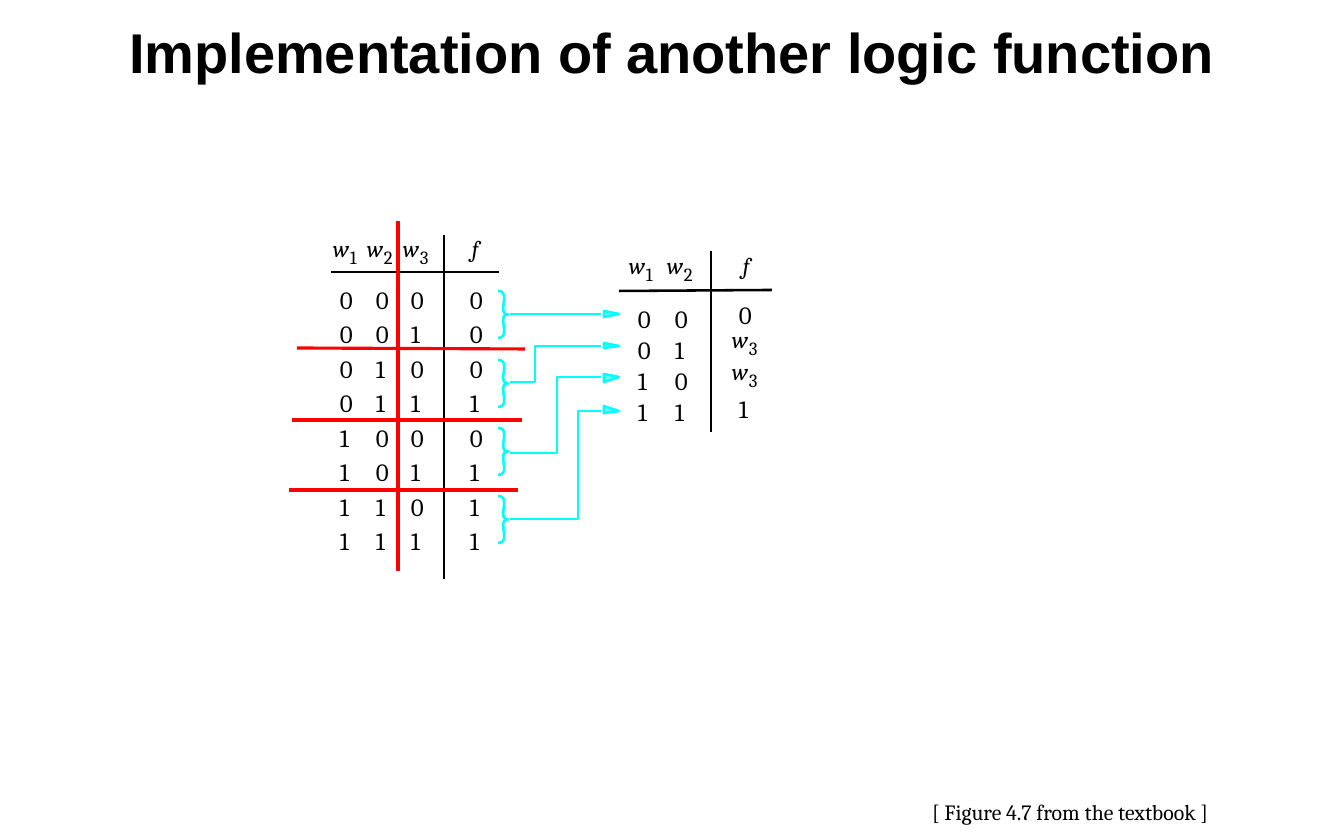
from typing import NamedTuple

from lxml.etree import SubElement
from pptx import Presentation
from pptx.dml.color import RGBColor
from pptx.enum.shapes import MSO_CONNECTOR
from pptx.enum.text import MSO_ANCHOR, MSO_AUTO_SIZE, PP_ALIGN
from pptx.oxml.ns import qn
from pptx.util import Emu, Pt

SCALE = 914400 / 112
BLACK = RGBColor(0x00, 0x00, 0x00)
RED = RGBColor(0xFF, 0x00, 0x00)
CYAN = RGBColor(0x00, 0xFF, 0xFF)
PALE = RGBColor(0x66, 0xFF, 0xFF)
THIN, THICK = 1.63, 2

Point = tuple[float, float]


class Rule(NamedTuple):
    x1: int
    y1: int
    x2: int
    y2: int
    color: RGBColor
    width: float


class Link(NamedTuple):
    """Brace around two rows, and the arrow to the row they reduce to."""
    top: int     # of the brace
    mid: int     # where the arrow leaves
    turn: int    # x of the bend
    tip: int     # where the arrow ends
    above: int   # reach of the arrowhead over the tip
    below: int


class Mark(NamedTuple):
    text: str
    x: int
    y: int


RULES = [
    Rule(499, 272, 331, 272, BLACK, THIN),
    Rule(444, 579, 444, 235, BLACK, THIN),
    Rule(772, 290, 619, 291, BLACK, THIN),
    Rule(711, 432, 711, 251, BLACK, THIN),
    Rule(398, 221, 398, 571, RED, THICK),
    Rule(297, 348, 525, 349, RED, THICK),
    Rule(292, 420, 522, 420, RED, THICK),
    Rule(289, 490, 518, 490, RED, THICK),
]
LINKS = [
    Link(291, 314, 535, 314, 3, 3),
    Link(360, 382, 535, 346, 3, 2),
    Link(428, 453, 557, 377, 3, 5),
    Link(496, 519, 578, 411, 5, 2),
]
NAMES = [
    Mark("w1", 333, 234), Mark("w2", 367, 234), Mark("w3", 403, 234),
    Mark("f", 472, 234),
    Mark("w1", 629, 251), Mark("w2", 667, 251), Mark("f", 743, 251),
    Mark("w3", 732, 325), Mark("w3", 732, 357),
]
FULL = ["0000", "0010", "0100", "0111", "1000", "1011", "1101", "1111"]
SHORT = ["00", "01", "10", "11"]


def px(n: float) -> Emu:
    return Emu(round(n * SCALE))


def style(frame, size: int, font: str, bold=False, italic=False) -> None:
    for run in frame.paragraphs[0].runs:
        run.font.size = Pt(size)
        run.font.name = font
        run.font.bold = bold
        run.font.italic = italic
        run.font.color.rgb = BLACK


def add_text(slide, text: str, x: int, y: int, w: int, h: int, size: int,
             italic=False, inset=False) -> None:
    frame = slide.shapes.add_textbox(px(x), px(y), px(w), px(h)).text_frame
    frame.word_wrap = False
    frame.auto_size = MSO_AUTO_SIZE.SHAPE_TO_FIT_TEXT
    if not inset:
        frame.margin_left = frame.margin_right = 0
        frame.margin_top = frame.margin_bottom = 0
    frame.text = text
    style(frame, size, "Cambria", italic=italic)


def add_digit(slide, digit: str, x: int, y: int) -> None:
    add_text(slide, digit, x, y, 12, 30, 16)


def add_name(slide, mark: Mark) -> None:
    """Write an italic letter, with its index if it has one."""
    letter, index = mark.text[0], mark.text[1:]
    wide = 17 if index else 8
    add_text(slide, letter, mark.x, mark.y, wide, 28, 15, italic=True)
    if index:
        add_text(slide, index, mark.x + 17, mark.y + 12, 9, 22, 12)


def add_rule(slide, rule: Rule) -> None:
    line = slide.shapes.add_connector(
        MSO_CONNECTOR.STRAIGHT,
        px(rule.x1), px(rule.y1), px(rule.x2), px(rule.y2))
    line.line.color.rgb = rule.color
    line.line.width = Pt(rule.width)
    SubElement(line._element.spPr, qn("a:effectLst"))


def add_path(slide, points: list[Point], fill: RGBColor | None = None) -> None:
    """Draw a cyan outline, closed only when it is filled."""
    spots = [(px(x), px(y)) for x, y in points]
    pen = slide.shapes.build_freeform(*spots[0], scale=1.0)
    pen.add_line_segments(spots[1:], close=fill is not None)
    shape = pen.convert_to_shape()
    shape.shadow.inherit = False
    shape.line.color.rgb = CYAN
    shape.line.width = Pt(THIN)
    if fill is None:
        shape.fill.background()
    else:
        shape.fill.solid()
        shape.fill.fore_color.rgb = fill


def curve(a: Point, b: Point, c: Point, d: Point) -> list[Point]:
    """Points along a cubic curve from a to d."""
    def at(t: float) -> Point:
        s = 1 - t
        x, y = (s**3 * i + 3 * s * s * t * j + 3 * s * t * t * k + t**3 * m
                for i, j, k, m in zip(a, b, c, d))
        return x, y
    return [at(n / 12) for n in range(13)]


def add_link(slide, link: Link) -> None:
    top, mid, low = link.top, link.top + 23.5, link.top + 47
    upper = curve((498, top), (512, top), (496, mid), (508, mid))
    lower = curve((508, mid), (496, mid), (512, low), (498, low))
    add_path(slide, upper + lower[1:])
    if link.mid == link.tip:
        add_rule(slide, Rule(601, link.tip, 510, link.mid, CYAN, THIN))
    else:
        add_path(slide, [(601, link.tip), (link.turn, link.tip),
                         (link.turn, link.mid), (510, link.mid)])
    add_path(slide, [(604, link.tip + link.below), (619, link.tip),
                     (604, link.tip - link.above), (604, link.tip)], PALE)


def add_title(slide, text: str) -> None:
    title = slide.shapes.title
    title.left, title.top = px(112), px(0)
    title.width, title.height = px(1120), px(103)
    frame = title.text_frame
    frame.text = text
    frame.vertical_anchor = MSO_ANCHOR.MIDDLE
    frame.paragraphs[0].alignment = PP_ALIGN.CENTER
    style(frame, 36, "Arial", bold=True)


def main() -> None:
    deck = Presentation()
    deck.slide_width, deck.slide_height = px(1344), px(840)
    slide = deck.slides.add_slide(deck.slide_layouts[5])
    add_title(slide, "Implementation of another logic function")
    add_text(slide, "[ Figure 4.7 from the textbook ]",
             921, 793, 311, 38, 14, inset=True)
    for mark in NAMES:
        add_name(slide, mark)
    for i, row in enumerate(FULL):
        for digit, x in zip(row, (340, 376, 411, 470)):
            add_digit(slide, digit, x, 285 + 69 * i // 2)
    for i, row in enumerate(SHORT):
        for digit, x in zip(row, (638, 675)):
            add_digit(slide, digit, x, 304 + 31 * i)
    add_digit(slide, "0", 739, 300)
    add_digit(slide, "1", 739, 394)
    for link in LINKS:
        add_link(slide, link)
    for rule in RULES:
        add_rule(slide, rule)
    deck.save("out.pptx")


if __name__ == "__main__":
    main()
